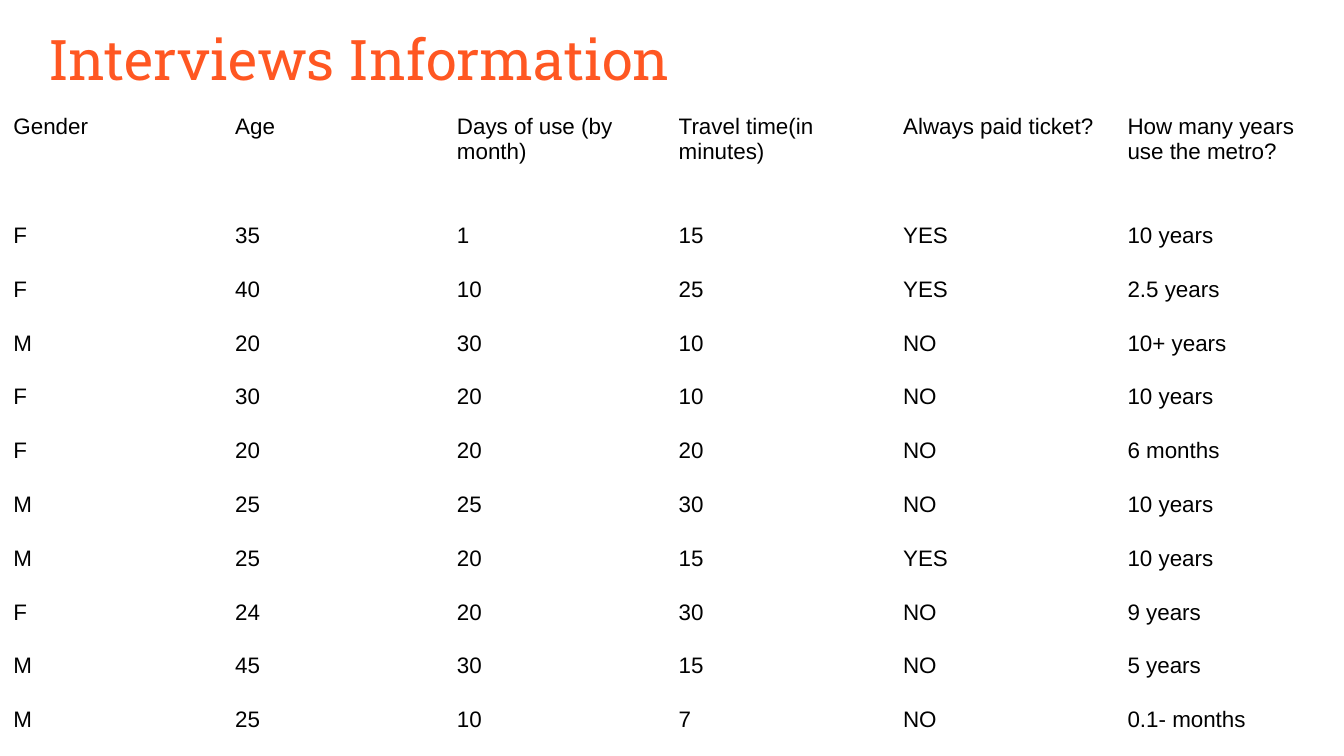
from pptx import Presentation
from pptx.dml.color import RGBColor
from pptx.enum.text import MSO_ANCHOR
from pptx.oxml.ns import qn
from pptx.util import Inches, Pt

COLORS = {"title": "FF5722", "text": "000000"}
PLAIN_TABLE_STYLE = "{2D5ABB26-0587-4C30-8999-92F81FD0307C}"
INSET = Inches(0.1)
COLUMN_WIDTHS = [1.65] * 3 + [1.67] * 3
HEADER_HEIGHT, ROW_HEIGHT = 0.81, 0.31

HEADERS = ["Gender", "Age", "Days of use (by month)", "Travel time(in minutes)",
           "Always paid ticket?", "How many years use the metro?"]
INTERVIEWS = [
    ("F", "35", "1", "15", "YES", "10 years"),
    ("F", "40", "10", "25", "YES", "2.5 years"),
    ("M", "20", "30", "10", "NO", "10+ years"),
    ("F", "30", "20", "10", "NO", "10 years"),
    ("F", "20", "20", "20", "NO", "6 months"),
    ("M", "25", "25", "30", "NO", "10 years"),
    ("M", "25", "20", "15", "YES", "10 years"),
    ("F", "24", "20", "30", "NO", "9 years"),
    ("M", "45", "30", "15", "NO", "5 years"),
    ("M", "25", "10", "7", "NO", "0.1- months"),
]


def add_span(frame, text, font, size, color):
    span = frame.paragraphs[0].add_run()
    span.text = text
    span.font.name = font
    span.font.size = Pt(size)
    span.font.color.rgb = RGBColor.from_string(COLORS[color])


def set_insets(box):
    """Give a text frame or table cell equal margins and top alignment."""
    box.margin_left = box.margin_right = INSET
    box.margin_top = box.margin_bottom = INSET
    box.vertical_anchor = MSO_ANCHOR.TOP


def add_title(page, left, top, width, height):
    box = page.shapes.add_textbox(Inches(left), Inches(top), Inches(width), Inches(height))
    frame = box.text_frame
    frame.word_wrap = True
    set_insets(frame)
    add_span(frame, "Interviews Information", "Roboto Slab", 30, "title")


def add_interview_table(page, left, top):
    rows = [HEADERS, *INTERVIEWS]
    heights = [HEADER_HEIGHT] + [ROW_HEIGHT] * len(INTERVIEWS)
    frame = page.shapes.add_table(
        len(rows), len(HEADERS), Inches(left), Inches(top),
        Inches(sum(COLUMN_WIDTHS)), Inches(sum(heights)))
    table = frame.table
    table.first_row = table.horz_banding = False
    # A style without borders keeps them from adding to the row heights.
    next(frame.element.iter(qn("a:tableStyleId"))).text = PLAIN_TABLE_STYLE
    for column, width in zip(table.columns, COLUMN_WIDTHS):
        column.width = Inches(width)
    for row, height, texts in zip(table.rows, heights, rows):
        row.height = Inches(height)
        for cell, text in zip(row.cells, texts):
            cell.fill.background()
            set_insets(cell)
            add_span(cell.text_frame, text, "Arial", 12, "text")


def main():
    deck = Presentation()
    deck.slide_width = Inches(10)
    deck.slide_height = deck.slide_width * 9 // 16
    page = deck.slides.add_slide(deck.slide_layouts[6])
    add_title(page, 0.26, 0.08, 9.32, 0.63)
    add_interview_table(page, 0, 0.75)
    deck.save("out.pptx")


if __name__ == "__main__":
    main()
